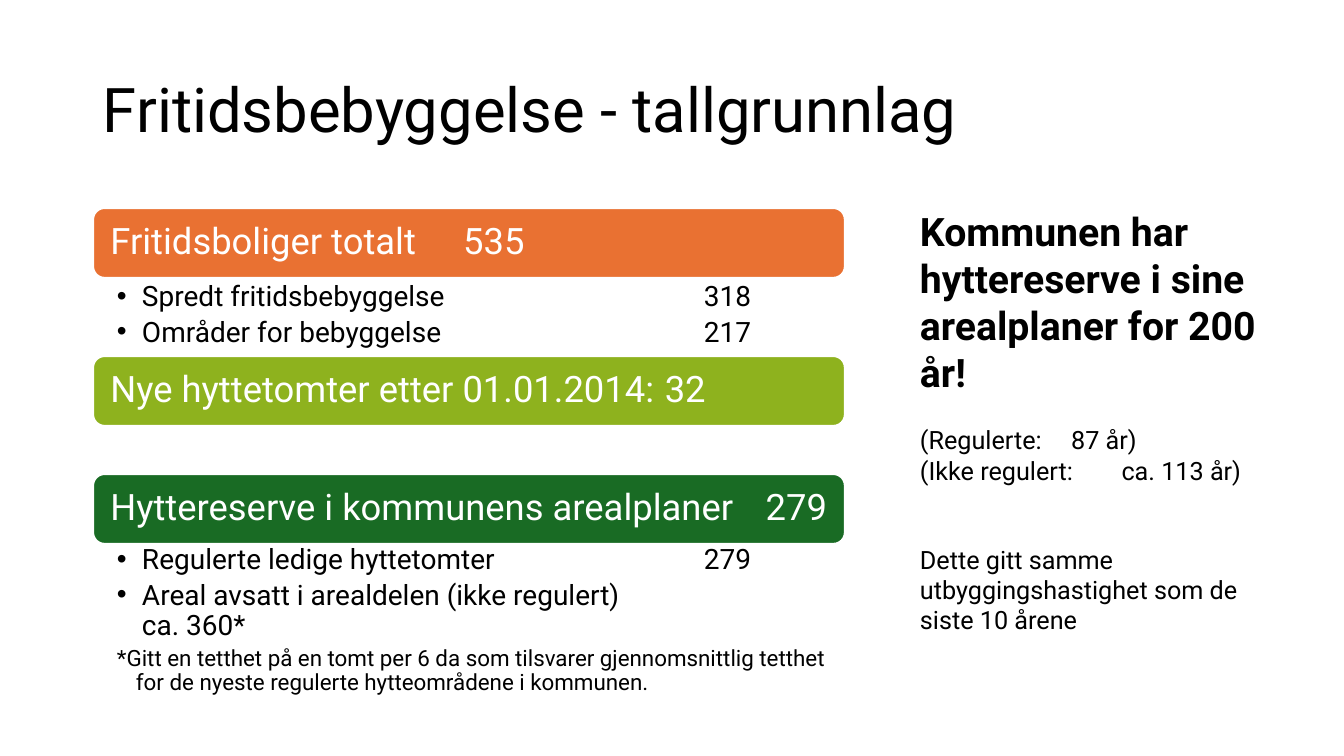
from pptx import Presentation
from pptx.dml.color import RGBColor
from pptx.enum.shapes import MSO_SHAPE
from pptx.enum.text import MSO_ANCHOR, MSO_AUTO_SIZE, PP_ALIGN
from pptx.oxml.ns import qn
from pptx.util import Pt
from lxml.etree import SubElement

EMU_PER_PX = 914400 / 100.8
FONT = "Roboto"
BLACK = RGBColor(0x00, 0x00, 0x00)
WHITE = RGBColor(0xFF, 0xFF, 0xFF)
ORANGE = RGBColor(0xE9, 0x71, 0x32)
LIME = RGBColor(0x8E, 0xB2, 0x1E)
GREEN = RGBColor(0x19, 0x6B, 0x24)

LEFT, WIDTH, BAR_HEIGHT = 93, 752, 70
BARS = [
    (208, ORANGE, "Fritidsboliger totalt\t535"),
    (356, LIME, "Nye hyttetomter etter 01.01.2014:\t32"),
    (474, GREEN, "Hyttereserve i kommunens arealplaner\t279"),
]
CABIN_TYPES = ["Spredt fritidsbebyggelse\t318", "Områder for bebyggelse\t217"]
RESERVES = [
    "Regulerte ledige hyttetomter\t279",
    "Areal avsatt i arealdelen (ikke regulert)\vca. 360*",
]
FOOTNOTE = ("*Gitt en tetthet på en tomt per 6 da som tilsvarer gjennomsnittlig "
            "tetthet for de nyeste regulerte hytteområdene i kommunen.")
# text, size, bold, space before in points
SIDEBAR = [
    ("Kommunen har hyttereserve i sine arealplaner for 200 år!", 28, True, 0),
    ("(Regulerte:\t87 år)", 18, False, 21),
    ("(Ikke regulert:\tca. 113 år)", 18, False, 0),
    ("Dette gitt samme utbyggingshastighet som de siste 10 årene", 18, False, 42),
]


def px(length):
    return round(length * EMU_PER_PX)


def place(shape, left, top, width, height):
    shape.left, shape.top = px(left), px(top)
    shape.width, shape.height = px(width), px(height)


def set_frame(frame, anchor, left, top, right, bottom):
    """Wrap the text, fix its size and set the margins in px."""
    frame.word_wrap = True
    frame.auto_size = MSO_AUTO_SIZE.NONE
    frame.vertical_anchor = anchor
    frame.margin_left, frame.margin_top = px(left), px(top)
    frame.margin_right, frame.margin_bottom = px(right), px(bottom)


def write(paragraph, text, size, color=BLACK, bold=False, line=0.9,
          before=0, after=0, hanging=0, bullet=None, tab=None):
    paragraph.text = text
    paragraph.alignment = PP_ALIGN.LEFT
    properties = paragraph._p.get_or_add_pPr()
    properties.set("marL", str(px(hanging)))
    properties.set("indent", str(-px(hanging)))
    if bullet:
        SubElement(properties, qn("a:buFont"), typeface="Arial")
        SubElement(properties, qn("a:buChar"), char=bullet)
    else:
        SubElement(properties, qn("a:buNone"))
    if tab:
        tabs = SubElement(properties, qn("a:tabLst"))
        SubElement(tabs, qn("a:tab"), pos=str(px(tab)), algn="l")
    paragraph.line_spacing = line
    paragraph.space_before, paragraph.space_after = Pt(before), Pt(after)
    font = paragraph.font
    font.name, font.size, font.bold = FONT, Pt(size), bold
    font.color.rgb = color


def next_paragraph(frame, index):
    return frame.add_paragraph() if index else frame.paragraphs[0]


def add_bar(slide, top, color, text):
    bar = slide.shapes.add_shape(MSO_SHAPE.ROUNDED_RECTANGLE, px(LEFT), px(top),
                                 px(WIDTH), px(BAR_HEIGHT))
    bar.shadow.inherit = False
    bar.fill.solid()
    bar.fill.fore_color.rgb = color
    bar.line.color.rgb = WHITE
    bar.line.width = Pt(1.5)
    set_frame(bar.text_frame, MSO_ANCHOR.MIDDLE, 14, 11, 14, 11)
    write(bar.text_frame.paragraphs[0], text, 26, WHITE, tab=637)


def fill_list(placeholder, top, height, margin_top, items, footnote=None):
    place(placeholder, LEFT, top, WIDTH, height)
    frame = placeholder.text_frame
    set_frame(frame, MSO_ANCHOR.TOP, 24, margin_top, 12, margin_top)
    for index, item in enumerate(items):
        write(next_paragraph(frame, index), item, 20, after=4,
              hanging=25, bullet="•", tab=587)
    if footnote:
        write(frame.add_paragraph(), footnote, 16, after=4, hanging=19)


def add_sidebar(slide):
    box = slide.shapes.add_textbox(px(910), px(202), px(377), px(475))
    set_frame(box.text_frame, MSO_ANCHOR.TOP, 10, 5, 10, 5)
    for index, (text, size, bold, before) in enumerate(SIDEBAR):
        write(next_paragraph(box.text_frame, index), text, size, bold=bold,
              line=1.0, before=before, tab=202)


def main():
    presentation = Presentation()
    presentation.slide_width, presentation.slide_height = px(1344), px(756)
    two_content = presentation.slide_layouts[3]
    slide = presentation.slides.add_slide(two_content)
    title, cabin_types, reserves = slide.placeholders

    place(title, 93, 40, 1159, 146)
    set_frame(title.text_frame, MSO_ANCHOR.MIDDLE, 10, 5, 10, 5)
    write(title.text_frame.paragraphs[0], "Fritidsbebyggelse - tallgrunnlag", 44)

    for top, color, text in BARS:
        add_bar(slide, top, color, text)
    fill_list(cabin_types, 278, 78, 4, CABIN_TYPES)
    fill_list(reserves, 543, 130, 2, RESERVES, FOOTNOTE)
    add_sidebar(slide)
    presentation.save("out.pptx")


if __name__ == "__main__":
    main()
